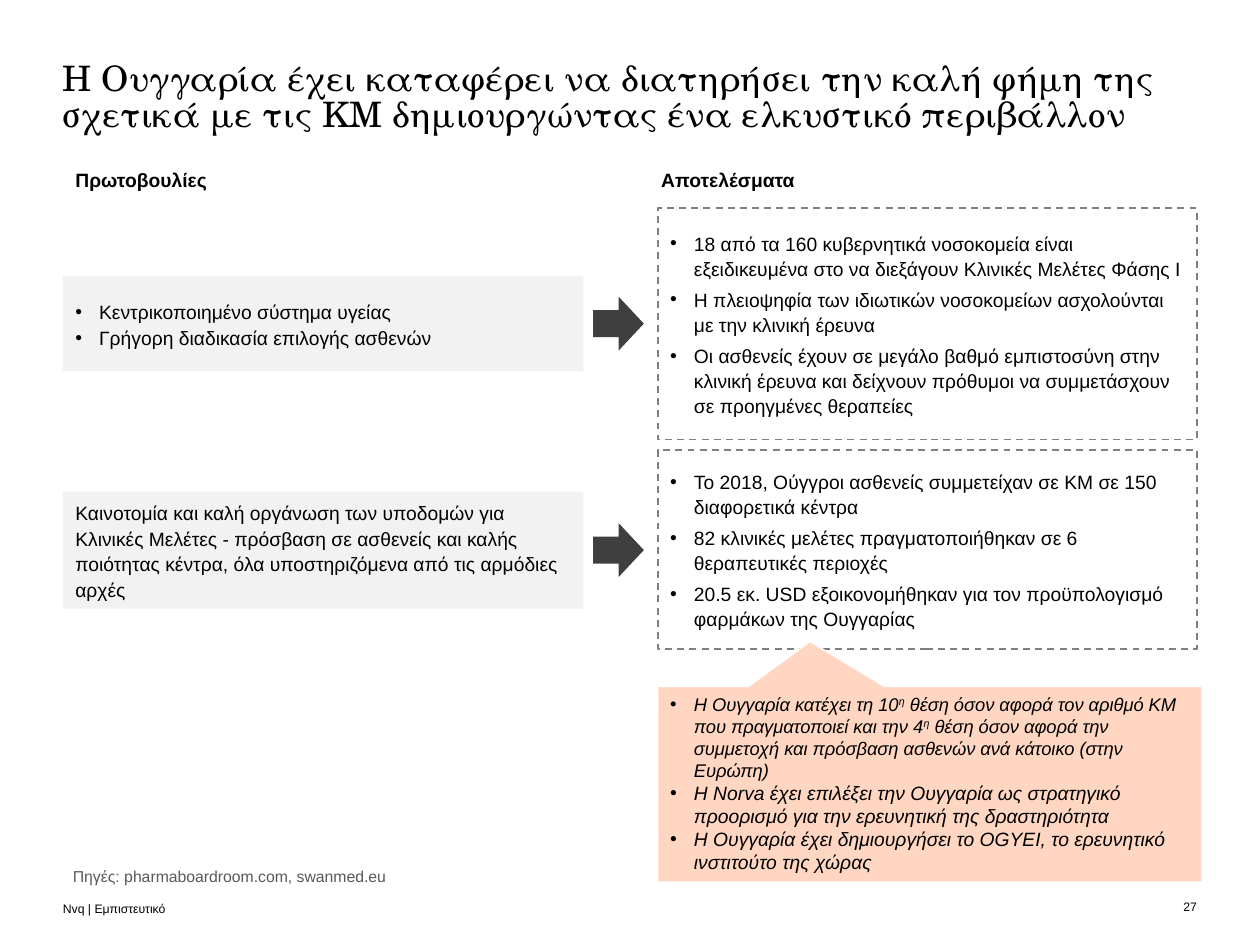
from lxml import etree
from pptx import Presentation
from pptx.dml.color import RGBColor
from pptx.enum.dml import MSO_LINE
from pptx.enum.shapes import MSO_SHAPE
from pptx.enum.text import MSO_ANCHOR, PP_ALIGN
from pptx.oxml.ns import qn
from pptx.util import Cm, Pt

RECTANGLE, ARROW, CALLOUT = (MSO_SHAPE.RECTANGLE, MSO_SHAPE.RIGHT_ARROW,
                             MSO_SHAPE.RECTANGULAR_CALLOUT)
TOP, MIDDLE, BOTTOM = MSO_ANCHOR.TOP, MSO_ANCHOR.MIDDLE, MSO_ANCHOR.BOTTOM
LEFT, RIGHT = PP_ALIGN.LEFT, PP_ALIGN.RIGHT
DASH = MSO_LINE.DASH
COLORS = {"black": "000000", "white": "FFFFFF", "source": "595959", "border": "7F7F7F",
          "arrow": "3F3F3F", "initiative": "F2F2F2", "callout": "FFD6C2"}

# Content; ^ marks the start and end of a superscript
TITLE = ("Η Ουγγαρία έχει καταφέρει να διατηρήσει την καλή φήμη της σχετικά με τις ΚΜ "
         "δημιουργώντας ένα ελκυστικό περιβάλλον")
HEADINGS = [("Πρωτοβουλίες", 1.27, 8.03), ("Αποτελέσματα", 13.08, 6)]
SOURCES = "Πηγές: pharmaboardroom.com, swanmed.eu"
FOOTER = "Nvq | Εμπιστευτικό"
PAGE_NUMBER = "27"
ROWS = [
    {"top": 4.19, "height": 4.67, "initiative_top": 5.56, "initiative_height": 1.93,
     "bulleted": True,
     "initiatives": ["Κεντρικοποιημένο σύστημα υγείας",
                     "Γρήγορη διαδικασία επιλογής ασθενών"],
     "results": [
         "18 από τα 160 κυβερνητικά νοσοκομεία είναι εξειδικευμένα στο να διεξάγουν "
         "Κλινικές Μελέτες Φάσης Ι",
         "Η πλειοψηφία των ιδιωτικών νοσοκομείων ασχολούνται με την κλινική έρευνα",
         "Οι ασθενείς έχουν σε μεγάλο βαθμό εμπιστοσύνη στην κλινική έρευνα και δείχνουν "
         "πρόθυμοι να συμμετάσχουν σε προηγμένες θεραπείες"]},
    {"top": 9.07, "height": 4.01, "initiative_top": 9.91, "initiative_height": 2.36,
     "bulleted": False,
     "initiatives": [
         "Καινοτομία και καλή οργάνωση των υποδομών για Κλινικές Μελέτες - πρόσβαση σε "
         "ασθενείς και καλής ποιότητας κέντρα, όλα υποστηριζόμενα από τις αρμόδιες αρχές"],
     "results": [
         "Το 2018, Ούγγροι ασθενείς συμμετείχαν σε ΚΜ σε 150 διαφορετικά κέντρα",
         "82 κλινικές μελέτες πραγματοποιήθηκαν σε 6 θεραπευτικές περιοχές",
         "20.5 εκ. USD εξοικονομήθηκαν για τον προϋπολογισμό φαρμάκων της Ουγγαρίας"]},
]
HIGHLIGHTS = [
    "Η Ουγγαρία κατέχει τη 10^η^ θέση όσον αφορά τον αριθμό ΚΜ που πραγματοποιεί και την "
    "4^η^ θέση όσον αφορά την συμμετοχή και πρόσβαση ασθενών ανά κάτοικο (στην Ευρώπη)",
    "Η Norva έχει επιλέξει την Ουγγαρία ως στρατηγικό προορισμό για την ερευνητική της "
    "δραστηριότητα",
    "Η Ουγγαρία έχει δημιουργήσει το OGYEI, το ερευνητικό ινστιτούτο της χώρας"]

# Layout in centimetres
MARGIN, CONTENT_WIDTH = 1.27, 22.86
INITIATIVE_WIDTH = 10.49
RESULT_LEFT, RESULT_WIDTH = 13.26, 10.87
ARROW_LEFT, ARROW_WIDTH, ARROW_HEIGHT = 11.96, 1.02, 1.09
BULLET_INDENT = 0.48
PADDED = (0.25, 0.13, 0.25, 0.13)
FLUSH = (0, 0, 0, 0)


def color(name):
    return RGBColor.from_string(COLORS[name])


def add_bullet(para):
    properties = para._p.get_or_add_pPr()
    properties.set("marL", str(Cm(BULLET_INDENT)))
    properties.set("indent", str(-Cm(BULLET_INDENT)))
    bullet_color = etree.SubElement(properties, qn("a:buClr"))
    etree.SubElement(bullet_color, qn("a:srgbClr"), val=COLORS["black"])
    etree.SubElement(properties, qn("a:buFont"), typeface="Arial")
    etree.SubElement(properties, qn("a:buChar"), char="•")


def write(shape, texts, sizes=(11,), font="Arial", ink="black", bold=False, italic=False,
          bullets=False, spacing=1.0, before=0, anchor=MIDDLE, align=LEFT, insets=PADDED):
    frame = shape.text_frame
    frame.word_wrap = True
    frame.vertical_anchor = anchor
    (frame.margin_left, frame.margin_top,
     frame.margin_right, frame.margin_bottom) = map(Cm, insets)
    for index, text in enumerate(texts):
        para = frame.add_paragraph() if index else frame.paragraphs[0]
        para.alignment = align
        para.line_spacing = spacing
        para.space_before = Pt(before if index else 0)
        if bullets:
            add_bullet(para)
        for part, piece in enumerate(text.split("^")):
            span = para.add_run()
            span.text = piece
            span.font.name = font
            span.font.size = Pt(sizes[min(index, len(sizes) - 1)])
            span.font.bold, span.font.italic = bold, italic
            span.font.color.rgb = color(ink)
            if part % 2:
                span.font._element.set("baseline", "30000")


def add_label(page, left, top, width, height, text, **style):
    box = page.shapes.add_textbox(Cm(left), Cm(top), Cm(width), Cm(height))
    write(box, [text], **style)


def add_box(page, kind, left, top, width, height, fill, line=None, weight=1):
    shape = page.shapes.add_shape(kind, Cm(left), Cm(top), Cm(width), Cm(height))
    shape.shadow.inherit = False
    shape.fill.solid()
    shape.fill.fore_color.rgb = color(fill)
    if line:
        shape.line.color.rgb = color(line)
        shape.line.width = Pt(weight)
    else:
        shape.line.fill.background()
    return shape


def add_row(page, row):
    result = add_box(page, RECTANGLE, RESULT_LEFT, row["top"], RESULT_WIDTH, row["height"],
                     "white", "border")
    result.line.dash_style = DASH
    write(result, row["results"], bullets=True, spacing=1.1, before=3)

    initiative = add_box(page, RECTANGLE, MARGIN, row["initiative_top"], INITIATIVE_WIDTH,
                         row["initiative_height"], "initiative")
    write(initiative, row["initiatives"], bullets=row["bulleted"], spacing=1.1)

    middle = row["initiative_top"] + row["initiative_height"] / 2
    add_box(page, ARROW, ARROW_LEFT, middle - ARROW_HEIGHT / 2, ARROW_WIDTH, ARROW_HEIGHT,
            "arrow")


def main():
    deck = Presentation()
    deck.slide_width, deck.slide_height = Cm(25.4), Cm(19.05)
    page = deck.slides.add_slide(deck.slide_layouts[6])

    # Title and column headings
    add_label(page, MARGIN, 1.27, CONTENT_WIDTH, 1.3, TITLE, sizes=(20,),
              font="TeX Gyre Schola", spacing=0.85, anchor=TOP, insets=FLUSH)
    for text, left, width in HEADINGS:
        add_label(page, left, 3.28, width, 0.71, text, bold=True)

    # Initiatives leading to results
    for row in ROWS:
        add_row(page, row)

    # Callout pointing at the last results
    callout = add_box(page, CALLOUT, RESULT_LEFT, 13.84, 10.97, 3.94, "callout", "white", 0.75)
    callout.adjustments[0], callout.adjustments[1] = -0.22, -0.73
    write(callout, HIGHLIGHTS, sizes=(10.5, 11), italic=True, bullets=True, anchor=TOP)

    # Sources and footer
    add_label(page, MARGIN, 17.42, CONTENT_WIDTH, 0.48, SOURCES, sizes=(9,), ink="source",
              insets=(0.2, 0, 0, 0))
    add_label(page, MARGIN, 18.08, 11.05, 0.38, FOOTER, sizes=(7,), anchor=BOTTOM,
              insets=FLUSH)
    add_label(page, 23.6, 18.08, 0.53, 0.38, PAGE_NUMBER, sizes=(7,), align=RIGHT,
              insets=FLUSH)

    deck.save("out.pptx")


if __name__ == "__main__":
    main()
